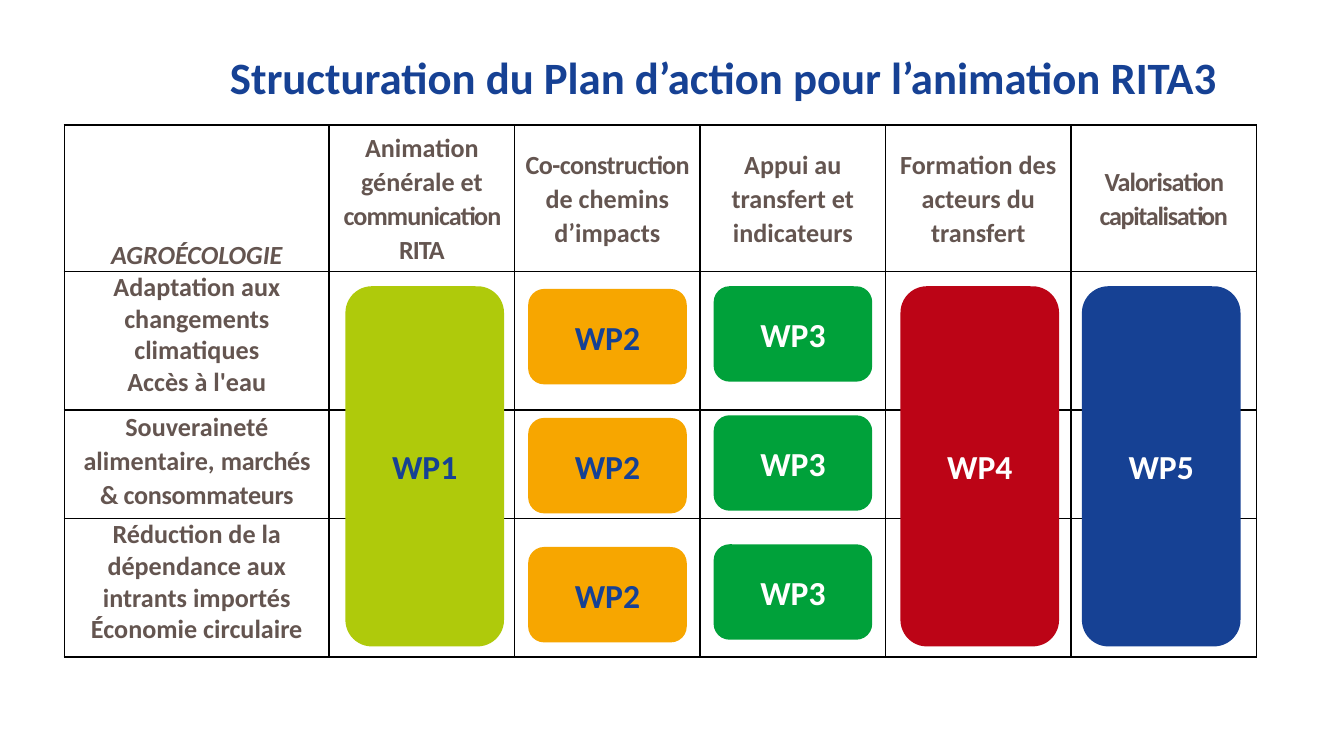
from pptx import Presentation
from pptx.dml.color import RGBColor
from pptx.enum.shapes import MSO_SHAPE
from pptx.enum.text import MSO_ANCHOR, PP_ALIGN
from pptx.oxml import parse_xml
from pptx.oxml.ns import nsdecls
from pptx.util import Inches, Pt

ROUNDED = MSO_SHAPE.ROUNDED_RECTANGLE
TOP, MIDDLE, BOTTOM = MSO_ANCHOR.TOP, MSO_ANCHOR.MIDDLE, MSO_ANCHOR.BOTTOM
LEFT, CENTER = PP_ALIGN.LEFT, PP_ALIGN.CENTER

BLUE, WHITE, BROWN, BLACK = "164194", "FFFFFF", "645550", "000000"
LIME, ORANGE, GREEN, RED = "AFCA0B", "F7A600", "00A13A", "BC0416"

COLUMNS = [1.97] + [1.38] * 5
ROWS = [1.09, 1.03, 0.81, 1.03]

# Each paragraph is a list of (text, letter spacing in points)
HEADERS = [
    [("Animation générale et ", 0), ("communication RITA", -0.5)],
    [("Co-construction ", -0.3), ("de chemins d’impacts", 0)],
    [("Appui au transfert et indicateurs", 0)],
    [("Formation des acteurs du transfert", 0)],
    [("Valorisation ", -0.5), ("capitalisation", -0.7)],
]
# (paragraphs, line spacing) for each theme in the first column
THEMES = [
    ([[("Adaptation aux changements climatiques", 0)], [("Accès à l'eau", 0)]], 1),
    ([[("Souveraineté alimentaire, ", 0), ("marchés & consommateurs", -0.2)]], 1.07),
    ([[("Réduction de la dépendance aux intrants importés Économie circulaire", 0)]], 1),
]
# (label, left, top, height, number of tiles, fill, text colour), relative to the table
PACKAGES = [
    ("WP1", 2.09, 1.2, 2.68, 1, LIME, BLUE),
    ("WP2", 3.45, 1.22, 0.71, 3, ORANGE, BLUE),
    ("WP3", 4.83, 1.2, 0.71, 3, GREEN, WHITE),
    ("WP4", 6.22, 1.2, 2.68, 1, RED, WHITE),
    ("WP5", 7.57, 1.2, 2.68, 1, BLUE, WHITE),
]
TILE_WIDTH, TILE_PITCH = 1.18, 0.96


def rgb(value):
    return RGBColor.from_string(value)


def format_font(font, color, **values):
    for name, value in {"name": "Calibri", "bold": True, **values}.items():
        setattr(font, name, value)
    font.color.rgb = rgb(color)


def set_margins(target, left, top, right, bottom):
    for side, value in zip(("left", "top", "right", "bottom"), (left, top, right, bottom)):
        setattr(target, f"margin_{side}", Inches(value))


def add_title(slide, left, top, width, height):
    s = slide.shapes.title
    s.left, s.top, s.width, s.height = map(Inches, (left, top, width, height))
    tf = s.text_frame
    tf.text = "Structuration du Plan d’action pour l’animation RITA3"
    tf.vertical_anchor = TOP
    set_margins(tf, 0.09, 0.13, 0, 0)
    p = tf.paragraphs[0]
    p.alignment = LEFT
    format_font(p.runs[0].font, BLUE, size=Pt(24))


def style_cell(cell):
    """Clear the fill and draw the four borders."""
    cell.fill.background()
    tc_pr = cell._tc.get_or_add_tcPr()
    for index, side in enumerate(("lnL", "lnR", "lnT", "lnB")):
        tc_pr.insert(index, parse_xml(
            f'<a:{side} {nsdecls("a")} w="12700"><a:solidFill>'
            f'<a:srgbClr val="{BLACK}"/></a:solidFill></a:{side}>'))
    set_margins(cell, 0.06, 0, 0.06, 0)


def fill_cell(cell, paragraphs, anchor, spacing=1.07, italic=False):
    cell.vertical_anchor = anchor
    tf = cell.text_frame
    for index, parts in enumerate(paragraphs):
        p = tf.add_paragraph() if index else tf.paragraphs[0]
        p.alignment, p.line_spacing = CENTER, spacing
        for text, tracking in parts:
            r = p.add_run()
            r.text = text
            format_font(r.font, BROWN, size=Pt(14), italic=italic)
            r._r.get_or_add_rPr().set("spc", str(round(tracking * 100)))


def add_matrix(slide, left, top):
    box = map(Inches, (left, top, sum(COLUMNS), sum(ROWS)))
    table = slide.shapes.add_table(len(ROWS), len(COLUMNS), *box).table
    table.first_row = table.horz_banding = False
    for column, width in zip(table.columns, COLUMNS):
        column.width = Inches(width)
    for row, height in zip(table.rows, ROWS):
        row.height = Inches(height)
    for cell in table.iter_cells():
        style_cell(cell)

    # Header row and theme column
    fill_cell(table.cell(0, 0), [[("AGROÉCOLOGIE", 0)]], BOTTOM, italic=True)
    for index, parts in enumerate(HEADERS, 1):
        fill_cell(table.cell(0, index), [parts], MIDDLE)
    for index, (paragraphs, spacing) in enumerate(THEMES, 1):
        fill_cell(table.cell(index, 0), paragraphs, TOP, spacing)


def add_tile(slide, label, left, top, width, height, fill, color):
    s = slide.shapes.add_shape(ROUNDED, *map(Inches, (left, top, width, height)))
    s.shadow.inherit = False
    s.fill.solid()
    s.fill.fore_color.rgb = rgb(fill)
    s.line.fill.background()
    tf = s.text_frame
    tf.text = label
    tf.vertical_anchor = MIDDLE
    p = tf.paragraphs[0]
    p.alignment = CENTER
    format_font(p.runs[0].font, color, size=Pt(18))


def add_packages(slide, left, top):
    for label, x, y, height, count, fill, color in PACKAGES:
        for index in range(count):
            add_tile(slide, label, left + x, top + y + index * TILE_PITCH,
                     TILE_WIDTH, height, fill, color)


def main():
    prs = Presentation()
    # 16:9 page
    prs.slide_width, prs.slide_height = Inches(10), Inches(10 * 9 / 16)
    slide = prs.slides.add_slide(prs.slide_layouts[5])
    add_title(slide, 1.62, 0.24, 7.9, 0.97)
    add_matrix(slide, 0.48, 0.93)
    add_packages(slide, 0.48, 0.93)
    prs.save("out.pptx")


if __name__ == "__main__":
    main()
